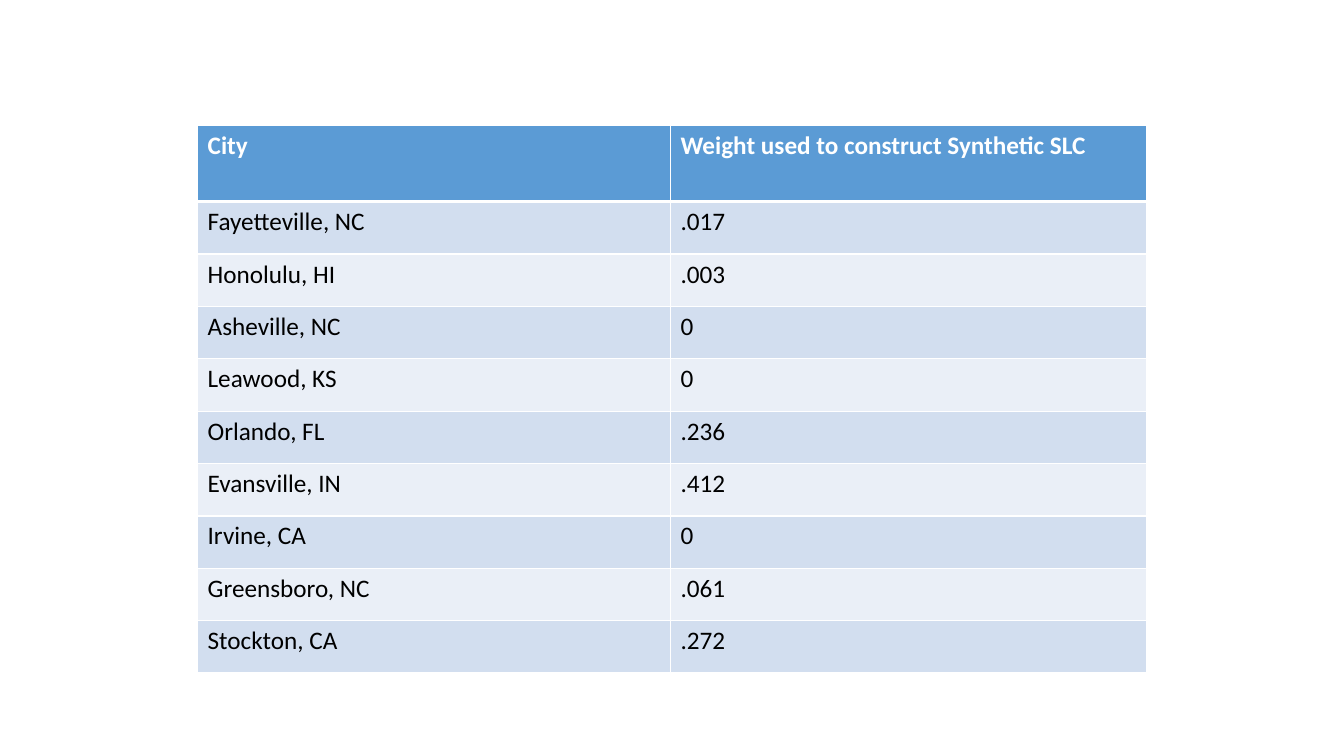
from dataclasses import dataclass

from lxml import etree
from pptx import Presentation
from pptx.dml.color import RGBColor
from pptx.oxml import ns
from pptx.table import Table, _Cell
from pptx.util import Inches, Pt


@dataclass(frozen=True)
class Theme:
    font: str = "Calibri"
    text_size: int = 18
    header_fill: str = "5B9BD5"
    header_text: str = "FFFFFF"
    body_text: str = "000000"
    bands: tuple[str, str] = ("D2DEEF", "EAEFF7")
    rule: str = "FFFFFF"
    thin_rule: int = 1
    thick_rule: int = 3


@dataclass(frozen=True)
class CityWeight:
    city: str
    weight: str


@dataclass(frozen=True)
class RowStyle:
    fill: str
    ink: str
    bold: bool
    top_rule: int
    bottom_rule: int


THEME = Theme()
HEADINGS = CityWeight("City", "Weight used to construct Synthetic SLC")
CITY_WEIGHTS = [
    CityWeight("Fayetteville, NC", ".017"),
    CityWeight("Honolulu, HI", ".003"),
    CityWeight("Asheville, NC", "0"),
    CityWeight("Leawood, KS", "0"),
    CityWeight("Orlando, FL", ".236"),
    CityWeight("Evansville, IN", ".412"),
    CityWeight("Irvine, CA", "0"),
    CityWeight("Greensboro, NC", ".061"),
    CityWeight("Stockton, CA", ".272"),
]
COLUMN_WIDTHS = (4.69, 4.72)
HEADER_HEIGHT = 0.76
CITY_HEIGHT = 0.52


def add_border(cell: _Cell, side: str, width: int) -> None:
    properties = cell._tc.get_or_add_tcPr()
    border = etree.SubElement(properties, ns.qn(f"a:ln{side}"), w=str(Pt(width)))
    fill = etree.SubElement(border, ns.qn("a:solidFill"))
    etree.SubElement(fill, ns.qn("a:srgbClr"), val=THEME.rule)


def fill_cell(cell: _Cell, wording: str, style: RowStyle) -> None:
    add_border(cell, "L", THEME.thin_rule)
    add_border(cell, "R", THEME.thin_rule)
    add_border(cell, "T", style.top_rule)
    add_border(cell, "B", style.bottom_rule)
    cell.fill.solid()
    cell.fill.fore_color.rgb = RGBColor.from_string(style.fill)
    run = cell.text_frame.paragraphs[0].add_run()
    run.text = wording
    run.font.name = THEME.font
    run.font.size = Pt(THEME.text_size)
    run.font.bold = style.bold
    run.font.color.rgb = RGBColor.from_string(style.ink)


def row_style(index: int) -> RowStyle:
    if index == 0:
        return RowStyle(THEME.header_fill, THEME.header_text, True,
                        THEME.thin_rule, THEME.thick_rule)
    top_rule = THEME.thick_rule if index == 1 else THEME.thin_rule
    return RowStyle(THEME.bands[(index - 1) % 2], THEME.body_text, False,
                    top_rule, THEME.thin_rule)


def fill_row(weights: Table, index: int, entry: CityWeight) -> None:
    weights.rows[index].height = Inches(CITY_HEIGHT if index else HEADER_HEIGHT)
    style = row_style(index)
    fill_cell(weights.cell(index, 0), entry.city, style)
    fill_cell(weights.cell(index, 1), entry.weight, style)


def main() -> None:
    deck = Presentation()
    deck.slide_width = Inches(13.33)
    deck.slide_height = Inches(7.5)
    slide = deck.slides.add_slide(deck.slide_layouts[6])

    entries = [HEADINGS, *CITY_WEIGHTS]
    height = HEADER_HEIGHT + CITY_HEIGHT * len(CITY_WEIGHTS)
    weights = slide.shapes.add_table(
        len(entries), len(COLUMN_WIDTHS), Inches(1.96), Inches(1.24),
        Inches(sum(COLUMN_WIDTHS)), Inches(height),
    ).table
    for column, width in zip(weights.columns, COLUMN_WIDTHS):
        column.width = Inches(width)
    for index, entry in enumerate(entries):
        fill_row(weights, index, entry)

    deck.save("out.pptx")


if __name__ == "__main__":
    main()
